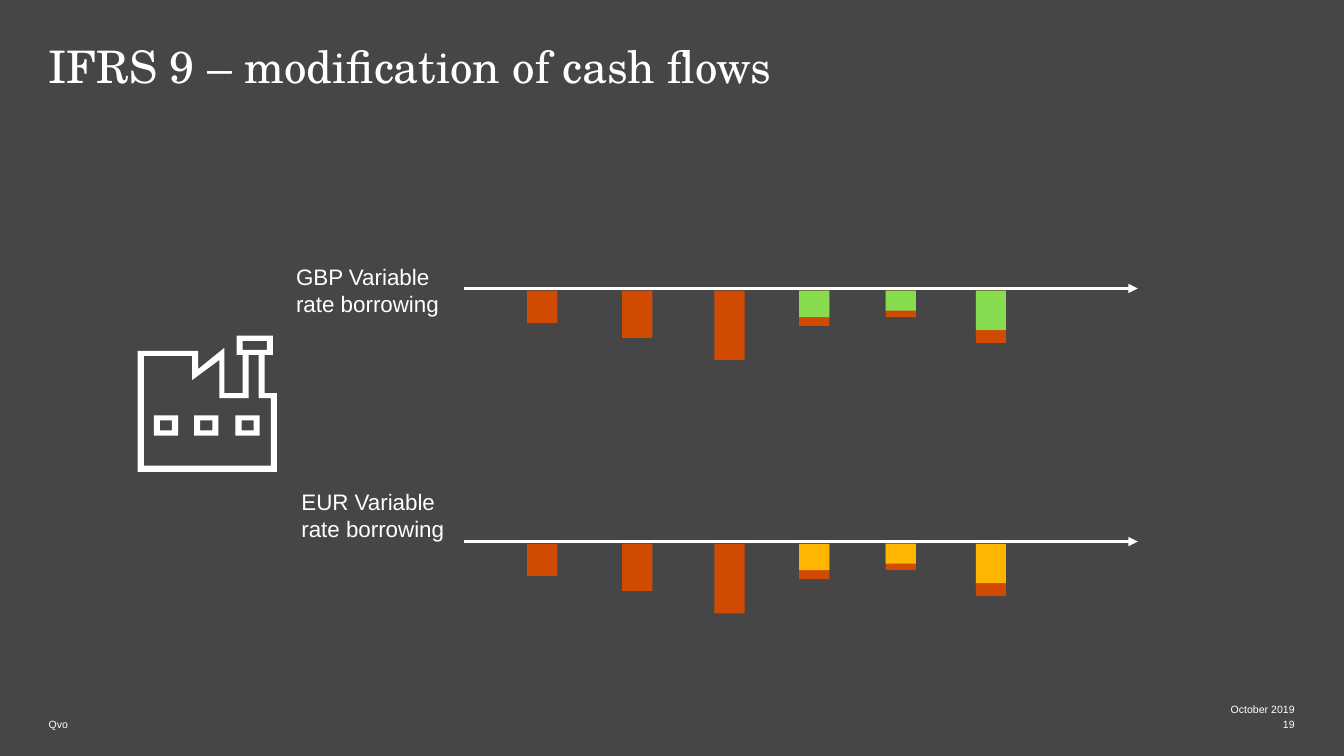
from pptx import Presentation
from pptx.dml.color import RGBColor
from pptx.enum.shapes import MSO_CONNECTOR, MSO_SHAPE
from pptx.enum.text import MSO_ANCHOR, PP_ALIGN
from pptx.oxml.ns import qn
from pptx.util import Pt
from lxml.etree import SubElement

WHITE = RGBColor(0xFF, 0xFF, 0xFF)
GREY = RGBColor(0x46, 0x46, 0x46)
ORANGE = RGBColor(0xD0, 0x4A, 0x02)
GREEN = RGBColor(0x86, 0xDB, 0x4F)
YELLOW = RGBColor(0xFF, 0xB6, 0x00)

BAR_WIDTH = 21.6
BAR_GAP = 1.6
BARS = [
    (44.9, 23, 0),
    (112.7, 33.8, 0),
    (178.6, 49.7, 0),
    (239.2, 25.2, 18.9),
    (300.9, 18.9, 14.3),
    (365.3, 37.4, 28.2),
]


def set_text(sp, text, size, font="Arial", align=PP_ALIGN.LEFT, anchor=MSO_ANCHOR.TOP):
    tf = sp.text_frame
    tf.word_wrap = True
    tf.vertical_anchor = anchor
    tf.margin_left = tf.margin_right = tf.margin_top = tf.margin_bottom = 0
    p = tf.paragraphs[0]
    p.text = text
    p.alignment = align
    p.font.name = font
    p.font.size = Pt(size)
    p.font.color.rgb = WHITE
    return p


def add_text(s, x, y, w, h, text, size, **style):
    sp = s.shapes.add_textbox(Pt(x), Pt(y), Pt(w), Pt(h))
    return set_text(sp, text, size, **style)


def add_title(s, x, y, w, h, text):
    sp = s.shapes.title
    sp.left, sp.top, sp.width, sp.height = Pt(x), Pt(y), Pt(w), Pt(h)
    p = set_text(sp, text, 32, font="TeX Gyre Schola")
    p.line_spacing = 0.85


def add_footer(s, x, y, w, h):
    side = 139
    right = x + w - side
    items = [
        (x, y + h, 431, "Qvo", PP_ALIGN.LEFT),
        (right, y, side, "October 2019", PP_ALIGN.RIGHT),
        (right, y + h, side, "19", PP_ALIGN.RIGHT),
    ]
    for left, top, width, text, align in items:
        add_text(s, left, top, width, h, text, 7.5, align=align, anchor=MSO_ANCHOR.BOTTOM)


def rectangle(x, y, w, h):
    return [(x, y), (x + w, y), (x + w, y + h), (x, y + h)]


def add_factory(s, x, y):
    outside = [
        (126, 57), (126, 19), (134, 19), (134, 0), (98, 0), (98, 19), (104, 19), (104, 57),
        (86, 57), (86, 12), (60, 33), (60, 15), (0, 15), (0, 135), (138, 135), (138, 57),
    ]
    inside = [
        (132, 129), (6, 129), (6, 20), (54, 20), (54, 44), (81, 24),
        (81, 62), (110, 62), (110, 19), (120, 19), (120, 62), (132, 62),
    ]
    contours = [outside, inside, rectangle(104, 5, 24, 9)]
    for left in (16, 56, 97):
        contours += [rectangle(left, 79, 24, 20), rectangle(left + 6, 84, 12, 10)]
    builder = s.shapes.build_freeform(*outside[0], scale=Pt(0.72))
    for i, points in enumerate(contours):
        if i:
            builder.move_to(*points[0])
        builder.add_line_segments(points[1:], close=True)
    sp = builder.convert_to_shape(Pt(x), Pt(y))
    fill_shape(sp, WHITE)


def fill_shape(sp, color):
    sp.shadow.inherit = False
    sp.fill.solid()
    sp.fill.fore_color.rgb = color
    sp.line.fill.background()


def add_bar(s, x, y, h, color):
    sp = s.shapes.add_shape(MSO_SHAPE.RECTANGLE, Pt(x), Pt(y), Pt(BAR_WIDTH), Pt(h))
    fill_shape(sp, color)


def add_timeline(s, x, y, w, label, label_x, label_y, color):
    axis = s.shapes.add_connector(MSO_CONNECTOR.STRAIGHT, Pt(x), Pt(y), Pt(x + w), Pt(y))
    axis.line.color.rgb = WHITE
    axis.line.width = Pt(2.25)
    SubElement(axis.line._get_or_add_ln(), qn("a:tailEnd"), type="triangle")
    SubElement(axis._element.spPr, qn("a:effectLst"))
    for offset, height, modified in BARS:
        add_bar(s, x + offset, y + BAR_GAP, height, ORANGE)
        if modified:
            add_bar(s, x + offset, y + BAR_GAP, modified, color)
    p = add_text(s, x + label_x, y + label_y, 109, 39, label, 16)
    p.space_after = Pt(6)


def main():
    prs = Presentation()
    prs.slide_width, prs.slide_height = Pt(960), Pt(540)
    s = prs.slides.add_slide(prs.slide_layouts[5])
    s.background.fill.solid()
    s.background.fill.fore_color.rgb = GREY
    add_title(s, 34.8, 33.8, 890, 109.4, "IFRS 9 – modification of cash flows")
    add_factory(s, 98.4, 239.8)
    add_timeline(s, 331.7, 206, 481, "GBP Variable rate borrowing", -120.2, -18, GREEN)
    add_timeline(s, 331.7, 386.8, 481, "EUR Variable rate borrowing", -116.4, -38.3, YELLOW)
    add_footer(s, 34.8, 500.6, 890, 10.8)
    prs.save("out.pptx")


if __name__ == "__main__":
    main()
